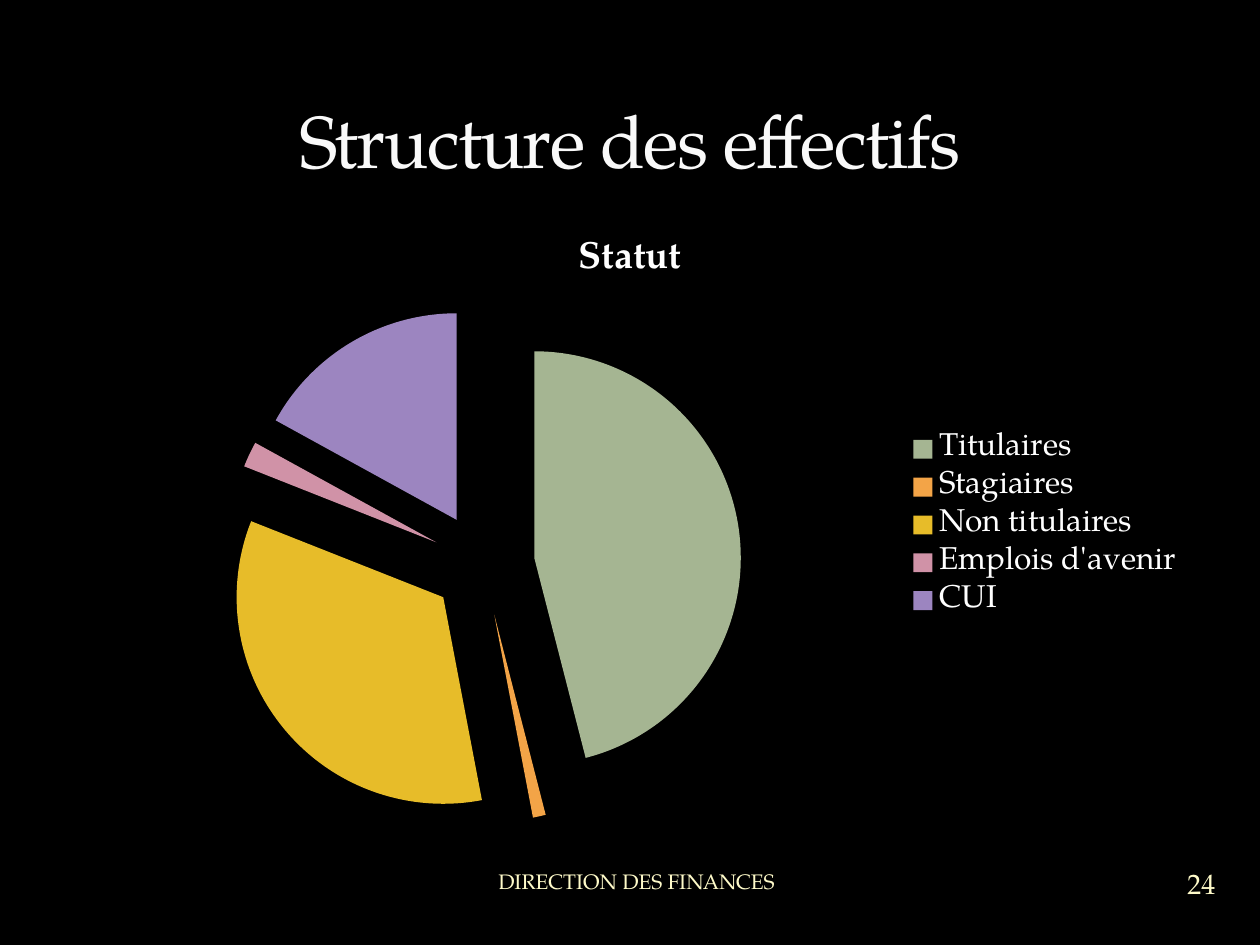
from pptx import Presentation
from pptx.chart.data import CategoryChartData
from pptx.dml.color import RGBColor
from pptx.enum.chart import XL_CHART_TYPE, XL_LEGEND_POSITION
from pptx.enum.text import MSO_ANCHOR, PP_ALIGN
from pptx.oxml import parse_xml
from pptx.oxml.ns import nsdecls
from pptx.util import Pt

BLACK = RGBColor(0x00, 0x00, 0x00)
WHITE = RGBColor(0xFF, 0xFF, 0xFF)
SOFT_WHITE = RGBColor(0xF9, 0xF9, 0xF9)
CREAM = RGBColor(0xFE, 0xFA, 0xC9)
SAGE = RGBColor(0xA5, 0xB5, 0x92)
ORANGE = RGBColor(0xF3, 0xA4, 0x47)
GOLD = RGBColor(0xE7, 0xBC, 0x29)
PINK = RGBColor(0xD0, 0x92, 0xA7)
PURPLE = RGBColor(0x9C, 0x85, 0xC0)
FONT = "TeX Gyre Pagella"


def apply_format(target, values):
    for name, value in values.items():
        setattr(target, name, value)


def style_font(font, size, color, bold=False):
    apply_format(font, {"name": FONT, "size": Pt(size), "bold": bold})
    font.color.rgb = color


deck = Presentation()
apply_format(deck, {"slide_width": Pt(720), "slide_height": Pt(540)})
page = deck.slides.add_slide(deck.slide_layouts[6])
page.background.fill.solid()
page.background.fill.fore_color.rgb = BLACK

statuses = [
    ("Titulaires", 46, SAGE),
    ("Stagiaires", 1, ORANGE),
    ("Non titulaires", 34, GOLD),
    ("Emplois d'avenir", 2, PINK),
    ("CUI", 17, PURPLE),
]
names, shares, colors = zip(*statuses)
data = CategoryChartData()
data.categories = names
data.add_series("Statut", shares)
chart = page.shapes.add_chart(
    XL_CHART_TYPE.PIE, Pt(36), Pt(120), Pt(648), Pt(360), data
).chart
style_font(chart.font, 18, WHITE)

chart.has_title = True
heading = chart.chart_title.text_frame
heading.text = "Statut"
style_font(heading.paragraphs[0].runs[0].font, 21.6, WHITE, True)
chart.has_legend = True
apply_format(
    chart.legend,
    {"position": XL_LEGEND_POSITION.RIGHT, "include_in_layout": False},
)
style_font(chart.legend.font, 18, WHITE)

plot = chart.plots[0]
plot.vary_by_categories = True
series = plot.series[0]
for index, color in enumerate(colors):
    fill = series.points[index].format.fill
    fill.solid()
    fill.fore_color.rgb = color
explosion = parse_xml(f'<c:explosion {nsdecls("c")} val="25"/>')
series._element.find("{*}dPt").addprevious(explosion)

labels = [
    ("24", (662.4, 486.7, 48.2, 36), 16, CREAM,
     PP_ALIGN.CENTER, MSO_ANCHOR.MIDDLE, (0, 0)),
    ("DIRECTION DES FINANCES", (167.8, 488.2, 282.2, 30.2), 12, CREAM,
     PP_ALIGN.RIGHT, MSO_ANCHOR.MIDDLE, (7.2, 3.6)),
    ("Structure des effectifs", (36, 12, 648, 96), 42, SOFT_WHITE,
     PP_ALIGN.CENTER, MSO_ANCHOR.BOTTOM, (7.2, 3.6)),
]
for text, bounds, size, color, alignment, anchor, (side, edge) in labels:
    box = page.shapes.add_textbox(*map(Pt, bounds))
    frame = box.text_frame
    apply_format(frame, {
        "word_wrap": True, "vertical_anchor": anchor,
        "margin_left": Pt(side), "margin_right": Pt(side),
        "margin_top": Pt(edge), "margin_bottom": Pt(edge),
    })
    para = frame.paragraphs[0]
    para.alignment = alignment
    span = para.add_run()
    span.text = text
    style_font(span.font, size, color)
span.font._element.set("spc", "-100")

deck.save("out.pptx")
